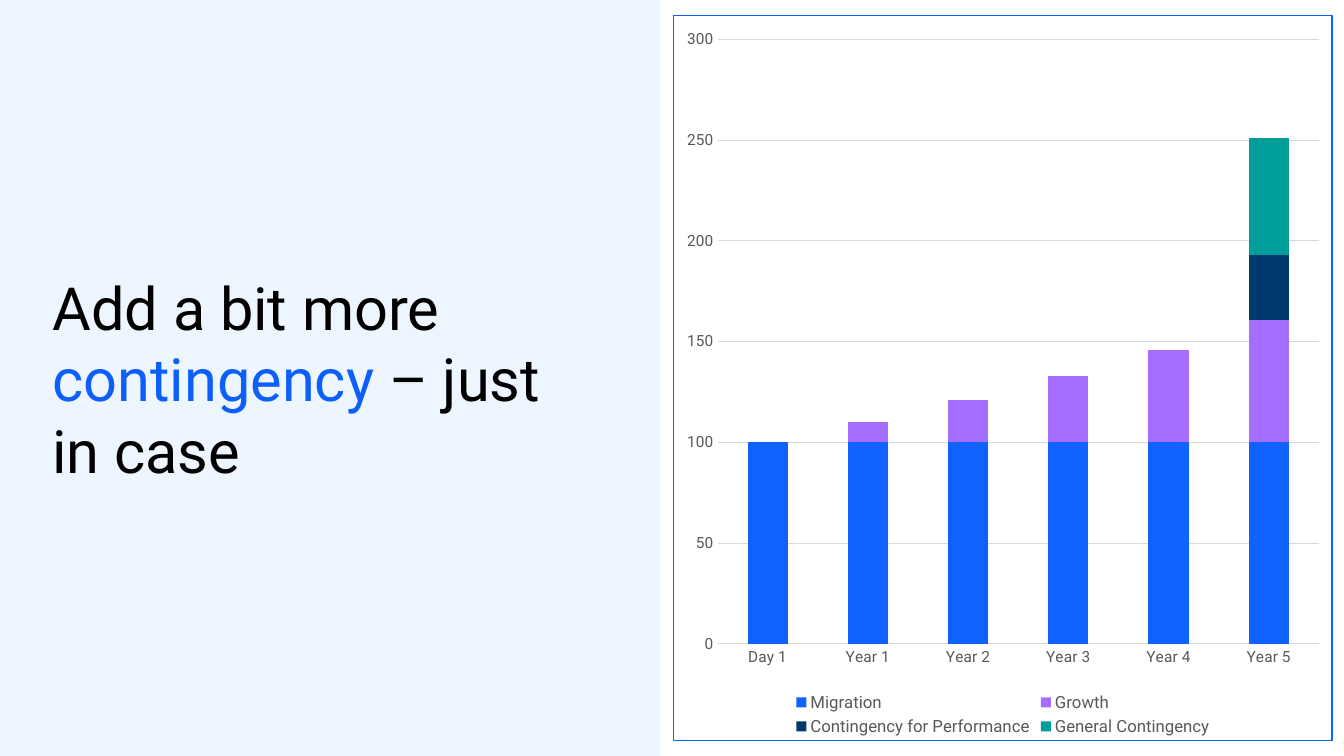
"""Builds a slide with a headline panel and a stacked contingency chart."""
from lxml import etree
from pptx import Presentation
from pptx.chart.data import CategoryChartData
from pptx.dml.color import RGBColor
from pptx.enum.chart import XL_CHART_TYPE, XL_LEGEND_POSITION, XL_TICK_MARK
from pptx.enum.shapes import MSO_SHAPE
from pptx.enum.text import MSO_ANCHOR, MSO_AUTO_SIZE, PP_ALIGN
from pptx.oxml import parse_xml
from pptx.oxml.ns import nsdecls, qn
from pptx.util import Inches, Pt

STACKED = XL_CHART_TYPE.COLUMN_STACKED
BOTTOM = XL_LEGEND_POSITION.BOTTOM
NO_TICK = XL_TICK_MARK.NONE
RECTANGLE = MSO_SHAPE.RECTANGLE
MIDDLE = MSO_ANCHOR.MIDDLE
FIXED_SIZE = MSO_AUTO_SIZE.NONE
LEFT = PP_ALIGN.LEFT
TITLE_ONLY = 5

WIDTH, HEIGHT = 13.33, 7.5
COLUMNS, ROWS = 100, 50
FONT = "Roboto"
COLOURS = {
    "panel": "EDF6FF", "text": "000000", "accent": "0E5FFA", "label": "595959",
    "grid": "D9D9D9", "frame": "0F62FE", "paper": "FFFFFF", "migration": "0F62FE",
    "growth": "A56EFF", "performance": "003A6D", "general": "009D9A",
}
YEARS = ["Day 1"] + [f"Year {n}" for n in range(1, 6)]
LOADS = [
    ("Migration", "migration", [100] * 6),
    ("Growth", "growth", [None, 10, 21, 33, 46, 61]),
    ("Contingency for Performance", "performance", [None] * 5 + [32]),
    ("General Contingency", "general", [None] * 5 + [58]),
]
HEADLINE = [("Add a bit more ", "text"), ("contingency ", "accent"), ("– just in case", "text")]


def rgb(name):
    return RGBColor.from_string(COLOURS[name])


def style_font(font, size, colour):
    font.name = FONT
    font.size = Pt(size)
    font.color.rgb = rgb(colour)


def write(paragraph, text, size=12, colour="text"):
    run = paragraph.add_run()
    run.text = text
    style_font(run.font, size, colour)


def draw_line(line, colour, width=0.75):
    line.color.rgb = rgb(colour)
    line.width = Pt(width)


class SlideBuilder:
    def __init__(self, presentation):
        self.slide = presentation.slides.add_slide(presentation.slide_layouts[TITLE_ONLY])

    def cells(self, column, row, columns, rows):
        across, down = WIDTH / COLUMNS, HEIGHT / ROWS
        return (Inches(column * across), Inches(row * down),
                Inches(columns * across), Inches(rows * down))

    def panel(self, *area, colour):
        panel = self.slide.shapes.add_shape(RECTANGLE, *self.cells(*area))
        panel.shadow.inherit = False
        panel.fill.solid()
        panel.fill.fore_color.rgb = rgb(colour)
        panel.line.fill.background()
        tree = self.slide.shapes.title.element.getparent()
        tree.insert(2, panel.element)

    def title(self, *area, parts, size):
        headline = self.slide.shapes.title
        headline.left, headline.top, headline.width, headline.height = self.cells(*area)
        frame = headline.text_frame
        frame.word_wrap = True
        frame.auto_size = FIXED_SIZE
        frame.vertical_anchor = MIDDLE
        frame.margin_left = frame.margin_right = Inches(0.05)
        frame.margin_top = frame.margin_bottom = Inches(0.05)
        paragraph = frame.paragraphs[0]
        paragraph.alignment = LEFT
        for text, colour in parts:
            write(paragraph, text, size=size, colour=colour)

    def stacked_chart(self, *area, categories, series):
        data = CategoryChartData(number_format="#,##0")
        data.categories = categories
        for name, _, values in series:
            data.add_series(name, values)
        chart = self.slide.shapes.add_chart(STACKED, *self.cells(*area), data).chart
        style_font(chart.font, 10, "text")
        chart.has_title = False
        chart.has_legend = True
        chart.legend.position = BOTTOM
        chart.legend.include_in_layout = False
        style_font(chart.legend.font, 12, "label")
        self.axes(chart)
        self.frame(chart)
        plot = chart.plots[0]
        plot.gap_width, plot.overlap = 150, 100
        plot.vary_by_categories = False
        for bars, (_, colour, _) in zip(plot.series, series):
            bars.format.fill.solid()
            bars.format.fill.fore_color.rgb = rgb(colour)

    def axes(self, chart):
        years, load = chart.category_axis, chart.value_axis
        for axis in (years, load):
            axis.major_tick_mark = axis.minor_tick_mark = NO_TICK
            style_font(axis.tick_labels.font, 11, "label")
        draw_line(years.format.line, "grid")
        load.minimum_scale, load.maximum_scale, load.major_unit = 0, 300, 50
        load.format.line.fill.background()
        load.has_major_gridlines = True
        draw_line(load.major_gridlines.format.line, "grid")
        load.tick_labels.number_format = "#,##0"
        load.tick_labels.number_format_is_linked = False

    def frame(self, chart):
        outline = parse_xml(f"<c:spPr {nsdecls('c', 'a')}/>")
        fill = etree.SubElement(outline, qn("a:solidFill"))
        etree.SubElement(fill, qn("a:srgbClr"), val=COLOURS["paper"])
        border = etree.SubElement(outline, qn("a:ln"), w=str(Pt(0.75)))
        stroke = etree.SubElement(border, qn("a:solidFill"))
        etree.SubElement(stroke, qn("a:srgbClr"), val=COLOURS["frame"])
        chart.element.find(qn("c:chart")).addnext(outline)


def main():
    presentation = Presentation()
    presentation.slide_width = Inches(WIDTH)
    presentation.slide_height = Inches(HEIGHT)
    builder = SlideBuilder(presentation)
    builder.panel(0, 0, 49.1, ROWS, colour="panel")
    builder.title(3.53, 14.73, 38.25, 20.53, parts=HEADLINE, size=42.5)
    builder.stacked_chart(50.1, 1, 49.05, 48, categories=YEARS, series=LOADS)
    presentation.save("out.pptx")


if __name__ == "__main__":
    main()
